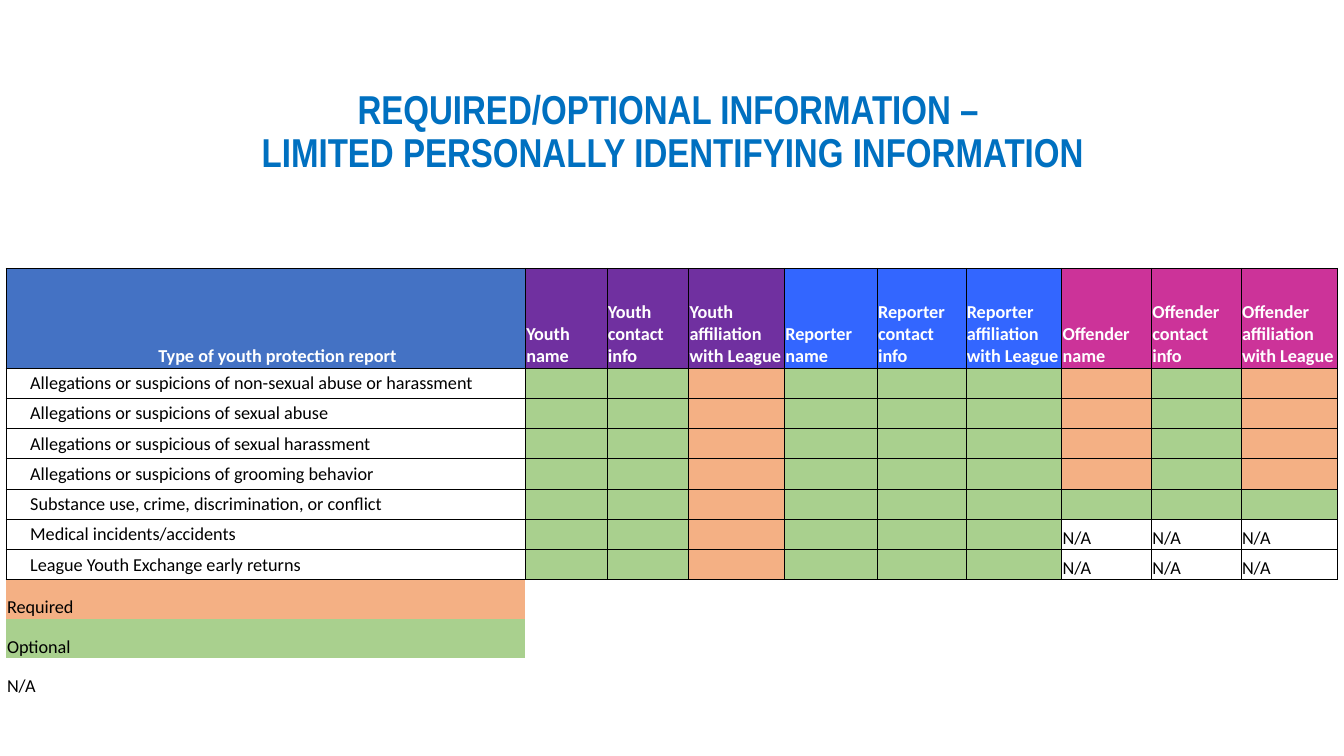
from lxml import etree
from pptx import Presentation
from pptx import util as u
from pptx.dml.color import RGBColor
from pptx.enum import text
from pptx.oxml.ns import qn

COLORS = {
    "title": "0070C0", "type": "4472C4", "youth": "7030A0", "reporter": "3366FF",
    "offender": "CC3399", "required": "F4B084", "optional": "A9D08E",
    "white": "FFFFFF", "black": "000000",
}
COLUMNS = [5.15, 0.81, 0.81, 0.95, 0.92, 0.88, 0.95, 0.89, 0.89, 0.95]
ROWS = [0.52, 0.99] + [0.3] * 7 + [0.39] * 3
HEADERS = [
    ("Type of youth protection report", "type"),
    ("Youth \vname", "youth"),
    ("Youth \vcontact \vinfo", "youth"),
    ("Youth affiliation with League", "youth"),
    ("Reporter name", "reporter"),
    ("Reporter contact \vinfo", "reporter"),
    ("Reporter affiliation with League", "reporter"),
    ("Offender name", "offender"),
    ("Offender contact \vinfo", "offender"),
    ("Offender affiliation with League", "offender"),
]
# One letter per column: R required, O optional, N not applicable
COMMON = "OOROOO"
REPORTS = [
    ("Allegations or suspicions of non-sexual abuse or harassment", "ROR"),
    ("Allegations or suspicions of sexual abuse", "ROR"),
    ("Allegations or suspicious of sexual harassment", "ROR"),
    ("Allegations or suspicions of grooming behavior", "ROR"),
    ("Substance use, crime, discrimination, or conflict", "OOO"),
    ("Medical incidents/accidents", "NNN"),
    ("League Youth Exchange early returns", "NNN"),
]
STATUS = {"R": ("", "required"), "O": ("", "optional"), "N": ("N/A", None)}
LEGEND = [("Required", "required"), ("Optional", "optional"), ("N/A", None)]
INDENT = 0.24


def rgb(name):
    return RGBColor.from_string(COLORS[name])


def set_borders(cell, sides):
    """Draw thin black lines on the given sides and none on the others."""
    tc_pr = cell._tc.get_or_add_tcPr()
    for side in "LRTB":
        ln = etree.SubElement(tc_pr, qn(f"a:ln{side}"), w=str(u.Pt(0.5)))
        if side in sides:
            fill = etree.SubElement(ln, qn("a:solidFill"))
            etree.SubElement(fill, qn("a:srgbClr"), val=COLORS["black"])
        else:
            etree.SubElement(ln, qn("a:noFill"))


def set_cell(cell, words="", fill=None, sides="LRTB", color="black", bold=False,
             left=0.01, anchor=text.MSO_ANCHOR.BOTTOM, align=text.PP_ALIGN.LEFT):
    set_borders(cell, sides)
    if fill:
        cell.fill.solid()
        cell.fill.fore_color.rgb = rgb(fill)
    else:
        cell.fill.background()
    cell.margin_left = u.Inches(left)
    cell.margin_right = cell.margin_top = u.Inches(0.01)
    cell.margin_bottom = 0
    cell.vertical_anchor = anchor
    cell.text = words
    p = cell.text_frame.paragraphs[0]
    p.alignment = align
    p.font.name, p.font.size, p.font.bold = "Calibri", u.Pt(13), bold
    p.font.color.rgb = rgb(color)
    if not words:  # keeps empty cells from stretching their row
        p._p.get_or_add_endParaRPr().set("sz", "1300")


def add_title(s):
    sp = s.shapes.title
    sp.left, sp.top = u.Inches(1.51), u.Inches(0.8)
    sp.width, sp.height = u.Inches(10.33), u.Inches(1.04)
    tf = sp.text_frame
    tf.text = "REQUIRED/OPTIONAL INFORMATION – \vLIMITED PERSONALLY IDENTIFYING INFORMATION"
    tf.vertical_anchor = text.MSO_ANCHOR.MIDDLE
    p = tf.paragraphs[0]
    p.alignment, p.line_spacing = text.PP_ALIGN.CENTER, 0.9
    p.font.name, p.font.size, p.font.bold = "Arial Narrow", u.Pt(28.8), True
    p.font.color.rgb = rgb("title")


def add_report_table(s):
    table = s.shapes.add_table(
        len(ROWS), len(COLUMNS), u.Inches(0.06), u.Inches(2.14),
        u.Inches(sum(COLUMNS)), u.Inches(sum(ROWS))).table
    table.first_row = table.horz_banding = False
    for column, width in zip(table.columns, COLUMNS):
        column.width = u.Inches(width)
    for row, height in zip(table.rows, ROWS):
        row.height = u.Inches(height)

    # Spacer row and column headings
    for c, (words, fill) in enumerate(HEADERS):
        first = c == 0
        set_cell(table.cell(0, c), sides="B")
        set_cell(table.cell(1, c), words, fill, color="white", bold=True,
                 left=INDENT if first else 0.01,
                 align=text.PP_ALIGN.CENTER if first else text.PP_ALIGN.LEFT)

    # Report types with the status of each field
    for r, (report, offender) in enumerate(REPORTS, 2):
        set_cell(table.cell(r, 0), report, left=INDENT, anchor=text.MSO_ANCHOR.MIDDLE)
        for c, status in enumerate(COMMON + offender, 1):
            set_cell(table.cell(r, c), *STATUS[status])

    # Legend
    start = 2 + len(REPORTS)
    for r, (words, fill) in enumerate(LEGEND, start):
        sides = "T" if r == start else ""
        set_cell(table.cell(r, 0), words, fill, sides)
        for c in range(1, len(COLUMNS)):
            set_cell(table.cell(r, c), sides=sides)


def main():
    prs = Presentation()
    prs.slide_width, prs.slide_height = u.Inches(13.33), u.Inches(7.5)
    s = prs.slides.add_slide(prs.slide_layouts[5])
    add_report_table(s)
    add_title(s)
    prs.save("out.pptx")


if __name__ == "__main__":
    main()
